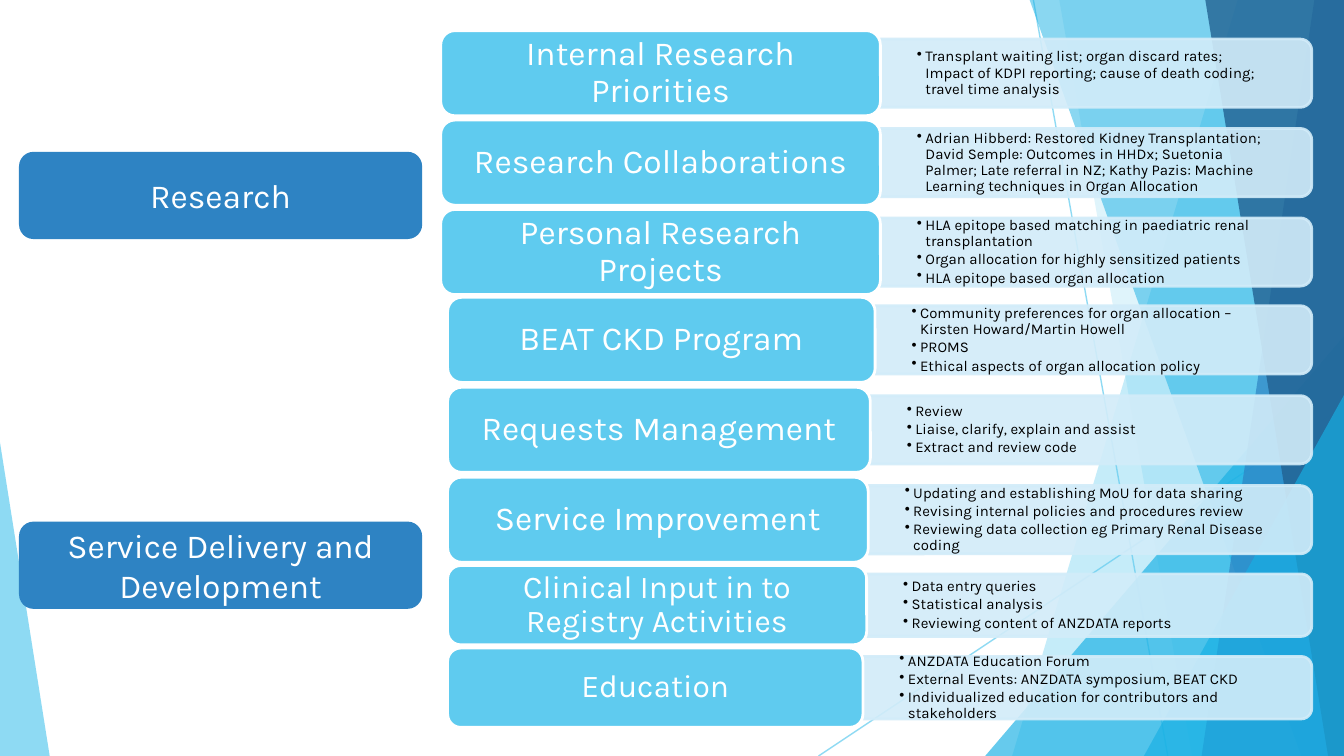
from dataclasses import dataclass

from pptx import Presentation
from pptx import util as u
from pptx.dml.color import RGBColor
from pptx.enum import shapes, text
from pptx.oxml.ns import qn
from lxml import etree

WHITE = RGBColor(0xFF, 0xFF, 0xFF)
BLACK = RGBColor(0x00, 0x00, 0x00)
SKY = RGBColor(0x5F, 0xCB, 0xEF)
CYAN = RGBColor(0x17, 0xB0, 0xE4)
BLUE = RGBColor(0x2E, 0x83, 0xC3)
NAVY = RGBColor(0x22, 0x62, 0x92)
PALE = RGBColor(0xD2, 0xEC, 0xF9)

WIDTH, HEIGHT = 25.4, 14.29
CARD_RIGHT = 24.79
CARD_TEXT_RIGHT = 24.71
CARD_TRIM = 0.16  # how much a card is shorter than its heading, above and below


@dataclass
class Ray:
    start: tuple[float, float]
    end: tuple[float, float]


@dataclass
class Facet:
    """Background panel from a slanted edge to the right side of the slide."""
    top_x: float
    bottom_x: float
    color: RGBColor
    alpha: int


@dataclass
class Triangle:
    left: float
    top: float
    width: float
    apex: float
    color: RGBColor
    alpha: int


@dataclass
class Activity:
    heading: str
    left: float
    top: float
    right: float
    bullets: list[str]
    height: float = 1.61
    size: int = 18


@dataclass
class Area:
    name: str
    top: float


BACKDROP = [
    Ray((19.53, 0), (22.07, HEIGHT)),
    Ray((WIDTH, 7.67), (15.47, HEIGHT)),
    Facet(23.39, 19.13, SKY, 36),
    Facet(20.02, 22.53, SKY, 20),
    Triangle(18.62, 6.35, 6.78, 1, CYAN, 66),
    Facet(19.46, 24.59, CYAN, 50),
    Facet(24.84, 22.71, BLUE, 70),
    Facet(22.78, 25.1, NAVY, 80),
    Triangle(21.62, 7.47, 3.78, 1, CYAN, 66),
    Triangle(0, 8.36, 0.94, 0, SKY, 70),
]

ACTIVITIES = [
    Activity("Internal Research Priorities", 8.33, 0.58, 16.64, [
        "Transplant waiting list; organ discard rates; Impact of KDPI reporting; "
        "cause of death coding; travel time analysis"]),
    Activity("Research Collaborations", 8.33, 2.27, 16.64, [
        "Adrian Hibberd: Restored Kidney Transplantation; David Semple: Outcomes in HHDx; "
        "Suetonia Palmer; Late referral in NZ; Kathy Pazis: Machine Learning techniques "
        "in Organ Allocation"]),
    Activity("Personal Research Projects", 8.33, 3.96, 16.64, [
        "HLA epitope based matching in paediatric renal transplantation",
        "Organ allocation for highly sensitized patients",
        "HLA epitope based organ allocation"]),
    Activity("BEAT CKD Program", 8.46, 5.62, 16.54, [
        "Community preferences for organ allocation – Kirsten Howard/Martin Howell",
        "PROMS",
        "Ethical aspects of organ allocation policy"]),
    Activity("Requests Management", 8.46, 7.32, 16.45, [
        "Review",
        "Liaise, clarify, explain and assist",
        "Extract and review code"]),
    Activity("Service Improvement", 8.46, 9.02, 16.41, [
        "Updating and establishing MoU for data sharing",
        "Revising internal policies and procedures review",
        "Reviewing data collection eg Primary Renal Disease coding"]),
    Activity("Clinical Input in to Registry Activities", 8.46, 10.69, 16.38, [
        "Data entry queries",
        "Statistical analysis",
        "Reviewing content of ANZDATA reports"], 1.5, 17),
    Activity("Education", 8.46, 12.25, 16.31, [
        "ANZDATA Education Forum",
        "External Events: ANZDATA symposium, BEAT CKD",
        "Individualized education for contributors and stakeholders"], 1.5, 17),
]

AREAS = [Area("Research", 2.87), Area("Service Delivery and Development", 9.86)]


def set_alpha(paint, percent: int) -> None:
    """Make the solid colour inside a shape's fill or line see-through."""
    color = next(paint.iter(qn("a:srgbClr")))
    etree.SubElement(color, qn("a:alpha"), val=str(percent * 1000))


def paint(shape, color: RGBColor, alpha: int = 100, outline: RGBColor | None = None) -> None:
    shape.shadow.inherit = False
    shape.fill.solid()
    shape.fill.fore_color.rgb = color
    if outline is None:
        shape.line.fill.background()
    else:
        shape.line.color.rgb = outline
        shape.line.width = u.Pt(1.5)
    if alpha < 100:
        props = shape.fill._xPr
        set_alpha(props.find(qn("a:solidFill")), alpha)
        if outline is not None:
            set_alpha(props.find(qn("a:ln")), alpha)


def add_preset(page, kind, left: float, top: float, width: float, height: float):
    return page.shapes.add_shape(kind, u.Cm(left), u.Cm(top), u.Cm(width), u.Cm(height))


def write(frame, lines: list[str], size: int, color: RGBColor, side: float, edge: float,
          bulleted: bool = False, spacing: float = 0.9) -> None:
    frame_format = {"word_wrap": True, "vertical_anchor": text.MSO_ANCHOR.MIDDLE,
                    "margin_left": u.Cm(side), "margin_right": u.Cm(side),
                    "margin_top": u.Cm(edge), "margin_bottom": u.Cm(edge)}
    for name, value in frame_format.items():
        setattr(frame, name, value)
    for index, line in enumerate(lines):
        para = frame.paragraphs[0] if index == 0 else frame.add_paragraph()
        para.alignment = text.PP_ALIGN.LEFT if bulleted else text.PP_ALIGN.CENTER
        para.line_spacing = spacing
        if bulleted:
            para.level = 1
            para.space_after = u.Pt(1.2)
            props = para._p.get_or_add_pPr()
            props.set("marL", str(u.Cm(0.16)))
            props.set("indent", str(u.Cm(-0.16)))
            etree.SubElement(props, qn("a:buChar"), char="•")
        span = para.add_run()
        span.text = line
        for name, value in {"name": "Karla", "size": u.Pt(size)}.items():
            setattr(span.font, name, value)
        span.font.color.rgb = color


def draw_ray(page, ray: Ray) -> None:
    line = page.shapes.add_connector(shapes.MSO_CONNECTOR.STRAIGHT,
                                     *map(u.Cm, ray.start + ray.end))
    line.line.color.rgb = SKY
    line.line.width = u.Pt(0.75)
    props = line._element.spPr
    set_alpha(props.find(qn("a:ln")), 70)
    etree.SubElement(props, qn("a:effectLst"))


def draw_facet(page, facet: Facet) -> None:
    corners = [(WIDTH, 0), (WIDTH, HEIGHT), (facet.bottom_x, HEIGHT)]
    builder = page.shapes.build_freeform(u.Cm(facet.top_x), 0)
    builder.add_line_segments([(u.Cm(x), u.Cm(y)) for x, y in corners], close=True)
    paint(builder.convert_to_shape(), facet.color, facet.alpha)


def draw_triangle(page, item: Triangle) -> None:
    shape = add_preset(page, shapes.MSO_SHAPE.ISOSCELES_TRIANGLE,
                       item.left, item.top, item.width, HEIGHT - item.top)
    shape.adjustments[0] = item.apex
    paint(shape, item.color, item.alpha)


def draw_activity(page, item: Activity) -> None:
    middle = item.top + item.height / 2
    depth = item.height - 2 * CARD_TRIM
    length = CARD_RIGHT - item.right
    center = (CARD_RIGHT + item.right) / 2
    card = add_preset(page, shapes.MSO_SHAPE.ROUND_2_SAME_RECTANGLE,
                      center - depth / 2, middle - length / 2, depth, length)
    card.rotation = 90
    paint(card, PALE, 90, PALE)

    box = page.shapes.add_textbox(u.Cm(item.right), u.Cm(middle - depth / 2),
                                  u.Cm(CARD_TEXT_RIGHT - item.right), u.Cm(depth))
    write(box.text_frame, item.bullets, 8, BLACK, 0.69, 0, bulleted=True)

    heading = add_preset(page, shapes.MSO_SHAPE.ROUNDED_RECTANGLE,
                         item.left, item.top, item.right - item.left, item.height)
    paint(heading, SKY, outline=WHITE)
    write(heading.text_frame, [item.heading], item.size, WHITE, 0.18, 0.1)


def draw_area(page, area: Area) -> None:
    box = add_preset(page, shapes.MSO_SHAPE.ROUNDED_RECTANGLE, 0.36, area.top, 7.62, 1.65)
    paint(box, BLUE)
    write(box.text_frame, [area.name], 18, WHITE, 0.25, 0.13, spacing=1.0)


def main() -> None:
    deck = Presentation()
    deck.slide_width, deck.slide_height = u.Cm(WIDTH), u.Cm(HEIGHT)
    page = deck.slides.add_slide(deck.slide_layouts[6])
    painters = {Ray: draw_ray, Facet: draw_facet, Triangle: draw_triangle,
                Activity: draw_activity, Area: draw_area}
    for item in BACKDROP + ACTIVITIES + AREAS:
        painters[type(item)](page, item)
    deck.save("out.pptx")


if __name__ == "__main__":
    main()
